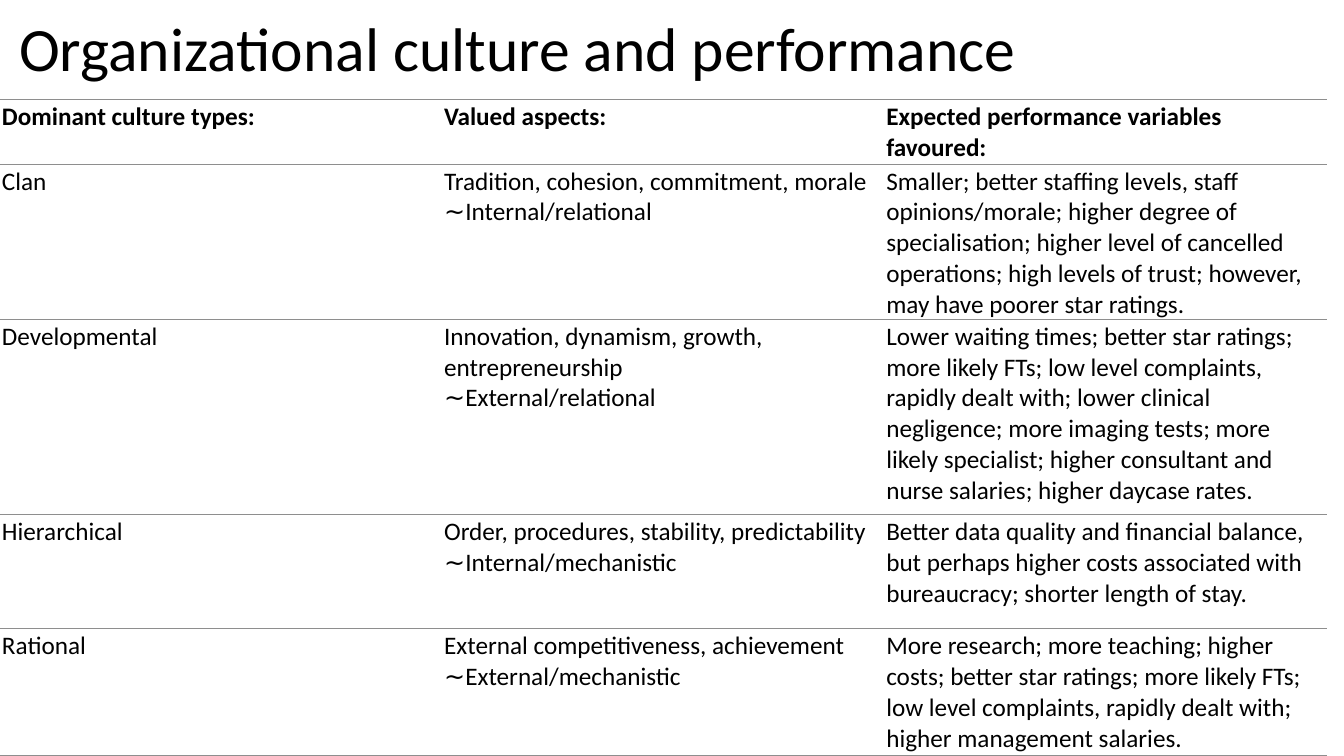
from dataclasses import dataclass

from lxml.etree import SubElement
from pptx import Presentation
from pptx.dml.color import RGBColor as RGB
from pptx.enum.text import MSO_ANCHOR as Anchor
from pptx.oxml.ns import qn
from pptx.util import Cm, Pt


@dataclass(frozen=True)
class Theme:
    font: str = "Calibri"
    ink: str = "000000"
    rule: str = "8E8E8E"
    title_size: int = 44
    body_size: int = 18
    rule_width: float = 0.75


THEME = Theme()
TITLE = "Organizational culture and performance"
HEADINGS = (
    "Dominant culture types:",
    "Valued aspects:",
    "Expected performance variables favoured:",
)
CULTURES = (
    ("Clan", "Tradition, cohesion, commitment, morale\n∼Internal/relational",
     "Smaller; better staffing levels, staff opinions/morale; higher degree of "
     "specialisation; higher level of cancelled operations; high levels of trust; "
     "however, may have poorer star ratings."),
    ("Developmental",
     "Innovation, dynamism, growth, entrepreneurship\n∼External/relational",
     "Lower waiting times; better star ratings; more likely FTs; low level complaints, "
     "rapidly dealt with; lower clinical negligence; more imaging tests; more likely "
     "specialist; higher consultant and nurse salaries; higher daycase rates."),
    ("Hierarchical",
     "Order, procedures, stability, predictability\n∼Internal/mechanistic",
     "Better data quality and financial balance, but perhaps higher costs associated "
     "with bureaucracy; shorter length of stay."),
    ("Rational", "External competitiveness, achievement\n∼External/mechanistic",
     "More research; more teaching; higher costs; better star ratings; more likely FTs; "
     "low level complaints, rapidly dealt with; higher management salaries."),
)
ROW_HEIGHTS = (1.14, 3.89, 4.93, 2.87, 3.2)


def write(tf, text, size=THEME.body_size, bold=False, spacing=None):
    p = tf.paragraphs[0]
    p.line_spacing = spacing
    for i, line in enumerate(text.split("\n")):
        if i:
            p.add_line_break()
        r = p.add_run()
        r.text = line
        r.font.name = THEME.font
        r.font.size = Pt(size)
        r.font.bold = bold
        r.font.color.rgb = RGB.from_string(THEME.ink)


def rule_cell(cell):
    tcPr = cell._tc.get_or_add_tcPr()
    for i, side in enumerate("LRTB"):
        ln = SubElement(tcPr, qn(f"a:ln{side}"))
        tcPr.insert(i, ln)
        if side in "LR":
            SubElement(ln, qn("a:noFill"))
        else:
            ln.set("w", str(Pt(THEME.rule_width)))
            fill = SubElement(ln, qn("a:solidFill"))
            SubElement(fill, qn("a:srgbClr"), val=THEME.rule)


def add_title(s, x, y, w, h):
    tf = s.shapes.add_textbox(Cm(x), Cm(y), Cm(w), Cm(h)).text_frame
    tf.word_wrap = True
    tf.vertical_anchor = Anchor.MIDDLE
    write(tf, TITLE, size=THEME.title_size, spacing=0.9)


def add_culture_table(s, x, y, w):
    rows = (HEADINGS, *CULTURES)
    frame = s.shapes.add_table(len(rows), len(HEADINGS), Cm(x), Cm(y), Cm(w),
                               Cm(sum(ROW_HEIGHTS)))
    table = frame.table
    table.first_row = table.horz_banding = False
    for column in table.columns:
        column.width = Cm(w / len(HEADINGS))
    for i, (texts, height) in enumerate(zip(rows, ROW_HEIGHTS)):
        table.rows[i].height = Cm(height)
        for j, text in enumerate(texts):
            cell = table.cell(i, j)
            cell.margin_left = cell.margin_right = Cm(0.05)
            cell.margin_top = cell.margin_bottom = Cm(0.05)
            cell.fill.background()
            rule_cell(cell)
            write(cell.text_frame, text, bold=i == 0)


def main():
    prs = Presentation()
    prs.slide_width, prs.slide_height = Cm(33.87), Cm(19.05)
    s = prs.slides.add_slide(prs.slide_layouts[6])
    add_title(s, 0.23, 0.33, 33.2, 1.96)
    add_culture_table(s, 0, 2.51, 33.43)
    prs.save("out.pptx")


if __name__ == "__main__":
    main()
